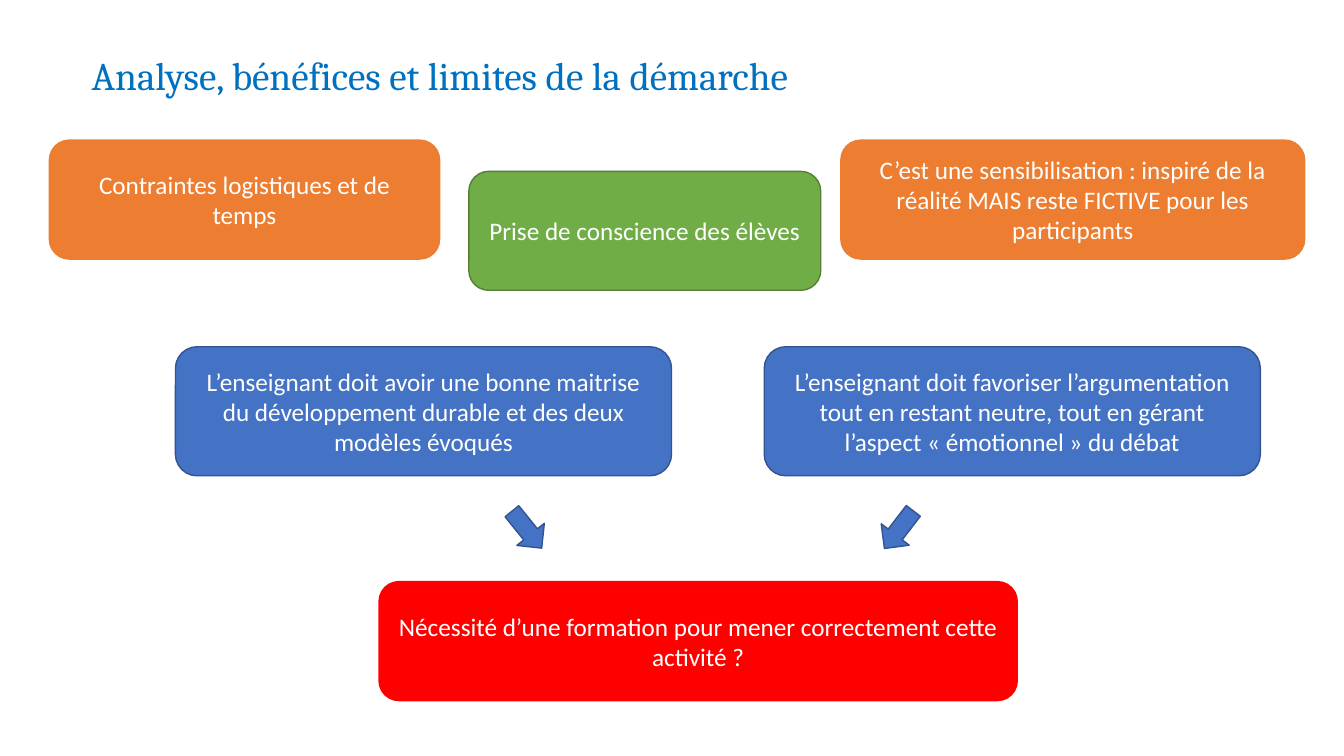
from pptx import Presentation
from pptx.dml.color import RGBColor
from pptx.enum.shapes import MSO_SHAPE as Shape
from pptx.enum.text import MSO_ANCHOR as Anchor, MSO_AUTO_SIZE as AutoSize, PP_ALIGN as Align
from pptx.util import Inches, Pt

ORANGE, GREEN, BLUE, RED = "ED7D31", "70AD47", "4472C4", "FF0000"
DARK_GREEN, DARK_BLUE = "538035", "325491"


def colour(hex_value):
    return RGBColor.from_string(hex_value)


def apply(target, values):
    for name, value in values.items():
        setattr(target, name, value)


class AnalysisSlide:
    title_font = {"name": "Cambria", "size": Pt(28), "bold": False}
    box_font = {"name": "Calibri", "size": Pt(18)}
    title_frame = {"word_wrap": True, "auto_size": AutoSize.NONE, "vertical_anchor": Anchor.TOP}
    title_spacing = {"alignment": Align.LEFT, "line_spacing": 0.9, "space_before": Pt(10)}
    box_frame = {"word_wrap": True, "vertical_anchor": Anchor.MIDDLE}

    def __init__(self, deck):
        self.slide = deck.slides.add_slide(deck.slide_layouts[5])

    def put_text(self, frame, text, layout, paragraph_format, font, ink):
        apply(frame, layout)
        paragraph = frame.paragraphs[0]
        apply(paragraph, paragraph_format)
        run = paragraph.add_run()
        run.text = text
        apply(run.font, font)
        run.font.color.rgb = colour(ink)

    def title(self, text, left, top, width, height):
        heading = self.slide.shapes.title
        apply(heading, {"left": Inches(left), "top": Inches(top),
                        "width": Inches(width), "height": Inches(height)})
        self.put_text(heading.text_frame, text, self.title_frame,
                      self.title_spacing, self.title_font, "0070C0")

    def figure(self, kind, left, top, width, height, fill, outline):
        figure = self.slide.shapes.add_shape(
            kind, Inches(left), Inches(top), Inches(width), Inches(height))
        figure.shadow.inherit = False
        figure.fill.solid()
        figure.fill.fore_color.rgb = colour(fill)
        figure.line.color.rgb = colour(outline)
        figure.line.width = Pt(1)
        return figure

    def box(self, text, left, top, width, height, fill, outline):
        box = self.figure(Shape.ROUNDED_RECTANGLE, left, top, width, height, fill, outline)
        self.put_text(box.text_frame, text, self.box_frame,
                      {"alignment": Align.CENTER}, self.box_font, "FFFFFF")

    def arrow(self, left, top, rotation):
        arrow = self.figure(Shape.DOWN_ARROW, left, top, 0.35, 0.47, BLUE, DARK_BLUE)
        arrow.rotation = rotation


def main():
    deck = Presentation()
    apply(deck, {"slide_width": Inches(13.33), "slide_height": Inches(7.5)})
    analysis = AnalysisSlide(deck)
    analysis.title("Analyse, bénéfices et limites de la démarche", 0.81, 0.51, 11.5, 0.6)

    # Benefit, between the two limits
    analysis.box("Prise de conscience des élèves", 4.65, 1.7, 3.49, 1.18, GREEN, DARK_GREEN)
    limits = [
        ("C’est une sensibilisation : inspiré de la réalité MAIS reste FICTIVE "
         "pour les participants", 8.34, 4.6),
        ("Contraintes logistiques et de temps", 0.49, 3.87),
    ]
    for text, left, width in limits:
        analysis.box(text, left, 1.39, width, 1.18, ORANGE, ORANGE)

    # Demands on the teacher, each with its arrow to the conclusion
    demands = [
        ("L’enseignant doit avoir une bonne maitrise du développement durable "
         "et des deux modèles évoqués", 1.74, 5.05, 321.1),
        ("L’enseignant doit favoriser l’argumentation tout en restant neutre, "
         "tout en gérant l’aspect « émotionnel » du débat", 7.58, 8.74, 37.5),
    ]
    for text, left, arrow_left, rotation in demands:
        analysis.box(text, left, 3.44, 4.92, 1.28, BLUE, DARK_BLUE)
        analysis.arrow(arrow_left, 5.02, rotation)

    # Conclusion
    analysis.box("Nécessité d’une formation pour mener correctement cette activité ?",
                 3.76, 5.77, 6.33, 1.18, RED, RED)

    deck.save("out.pptx")


if __name__ == "__main__":
    main()
